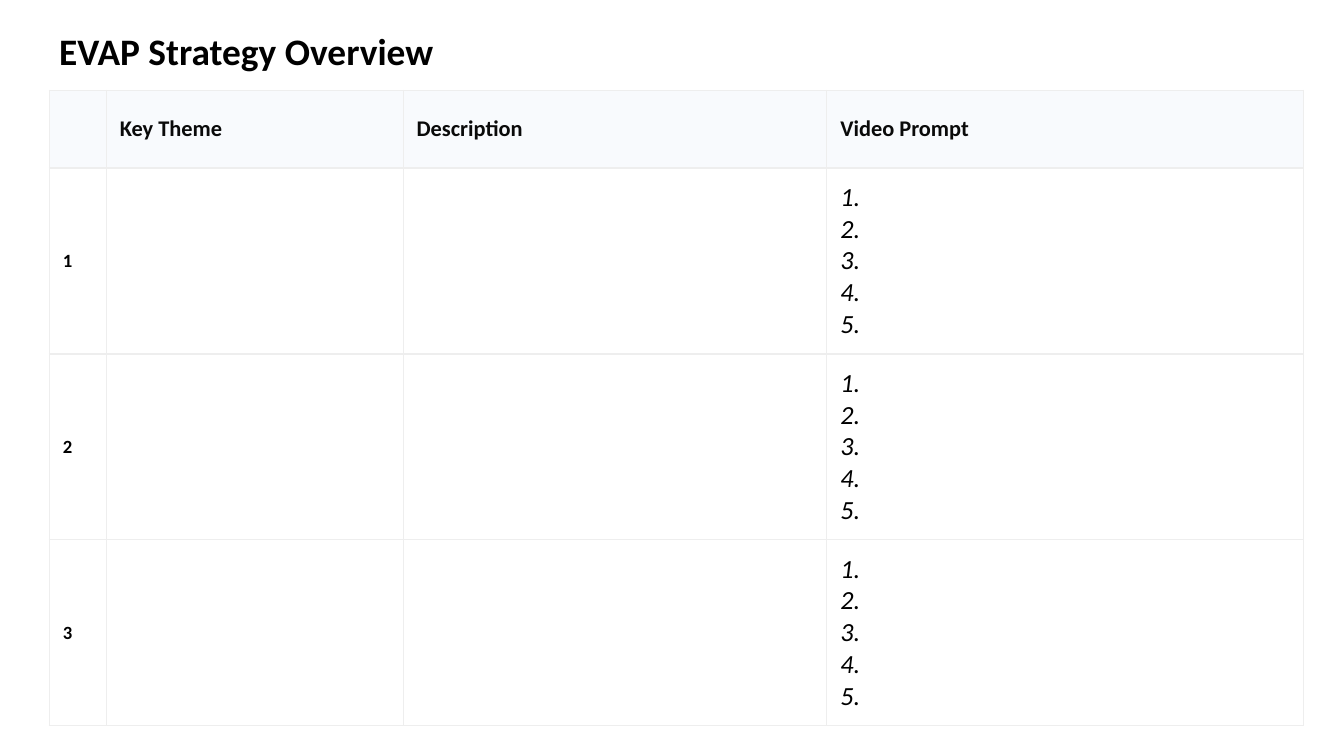
from lxml.etree import SubElement
from pptx import Presentation
from pptx.dml.color import RGBColor
from pptx.enum.text import MSO_ANCHOR as Anchor, MSO_AUTO_SIZE as AutoSize, PP_ALIGN as Align
from pptx.oxml.ns import qn
from pptx.util import Pt

COLORS = {"black": "000000", "heading": "0A0A0A", "header": "F8FAFD", "border": "EEEEEE"}
FONT = "Calibri"
INSET = 7.2
COLUMN_WIDTHS = [30.5, 159, 227, 255.5]
ROW_HEIGHTS = [41.5, 99.5, 99.5, 99.5]
HEADINGS = ["", "Key Theme", "Description", "Video Prompt"]
PROMPTS = "\n".join(f"{number}." for number in range(1, 6))


def style_text(frame, size, color="black", bold=False, italic=False):
    for para in frame.paragraphs:
        para.alignment = Align.LEFT
        para.font.name = FONT
        para.font.size = Pt(size)
        para.font.bold = bold
        para.font.italic = italic
        para.font.color.rgb = RGBColor.from_string(COLORS[color])


def set_insets(holder):
    holder.margin_left = holder.margin_right = Pt(INSET)
    holder.margin_top = holder.margin_bottom = Pt(INSET)


def add_title(page, text):
    title = page.shapes.title
    title.left, title.top, title.width, title.height = Pt(24.5), Pt(6.5), Pt(317), Pt(45)
    frame = title.text_frame
    frame.text = text
    frame.word_wrap = True
    frame.auto_size = AutoSize.NONE
    frame.vertical_anchor = Anchor.TOP
    set_insets(frame)
    frame.margin_top = Pt(8.5)
    style_text(frame, 20, bold=True)


def add_borders(cell):
    properties = cell._tc.get_or_add_tcPr()
    for side in ("lnL", "lnR", "lnT", "lnB"):
        line = SubElement(properties, qn(f"a:{side}"), w=str(Pt(0.75)))
        fill = SubElement(line, qn("a:solidFill"))
        SubElement(fill, qn("a:srgbClr"), val=COLORS["border"])


def fill_cell(cell, text, fill=None, anchor=Anchor.MIDDLE, **style):
    add_borders(cell)
    if fill:
        cell.fill.solid()
        cell.fill.fore_color.rgb = RGBColor.from_string(COLORS[fill])
    else:
        cell.fill.background()
    set_insets(cell)
    cell.vertical_anchor = anchor
    cell.text = text
    style_text(cell.text_frame, **style)


def add_strategy_table(page):
    table = page.shapes.add_table(
        len(ROW_HEIGHTS), len(COLUMN_WIDTHS), Pt(26.5), Pt(48.5),
        Pt(sum(COLUMN_WIDTHS)), Pt(sum(ROW_HEIGHTS))).table
    table.first_row = table.horz_banding = False
    for column, width in zip(table.columns, COLUMN_WIDTHS):
        column.width = Pt(width)
    for row, height in zip(table.rows, ROW_HEIGHTS):
        row.height = Pt(height)
    for column, heading in enumerate(HEADINGS):
        fill_cell(table.cell(0, column), heading, "header", size=12, color="heading", bold=True)
    for number in range(1, len(ROW_HEIGHTS)):
        fill_cell(table.cell(number, 0), str(number), size=10, bold=True)
        fill_cell(table.cell(number, 1), "", size=12)
        fill_cell(table.cell(number, 2), "", size=12)
        fill_cell(table.cell(number, 3), PROMPTS, anchor=Anchor.TOP, size=14, italic=True)


def main():
    deck = Presentation()
    deck.slide_width, deck.slide_height = Pt(720), Pt(405)
    page = deck.slides.add_slide(deck.slide_layouts[5])
    add_strategy_table(page)
    add_title(page, "EVAP Strategy Overview")
    deck.save("out.pptx")


if __name__ == "__main__":
    main()
